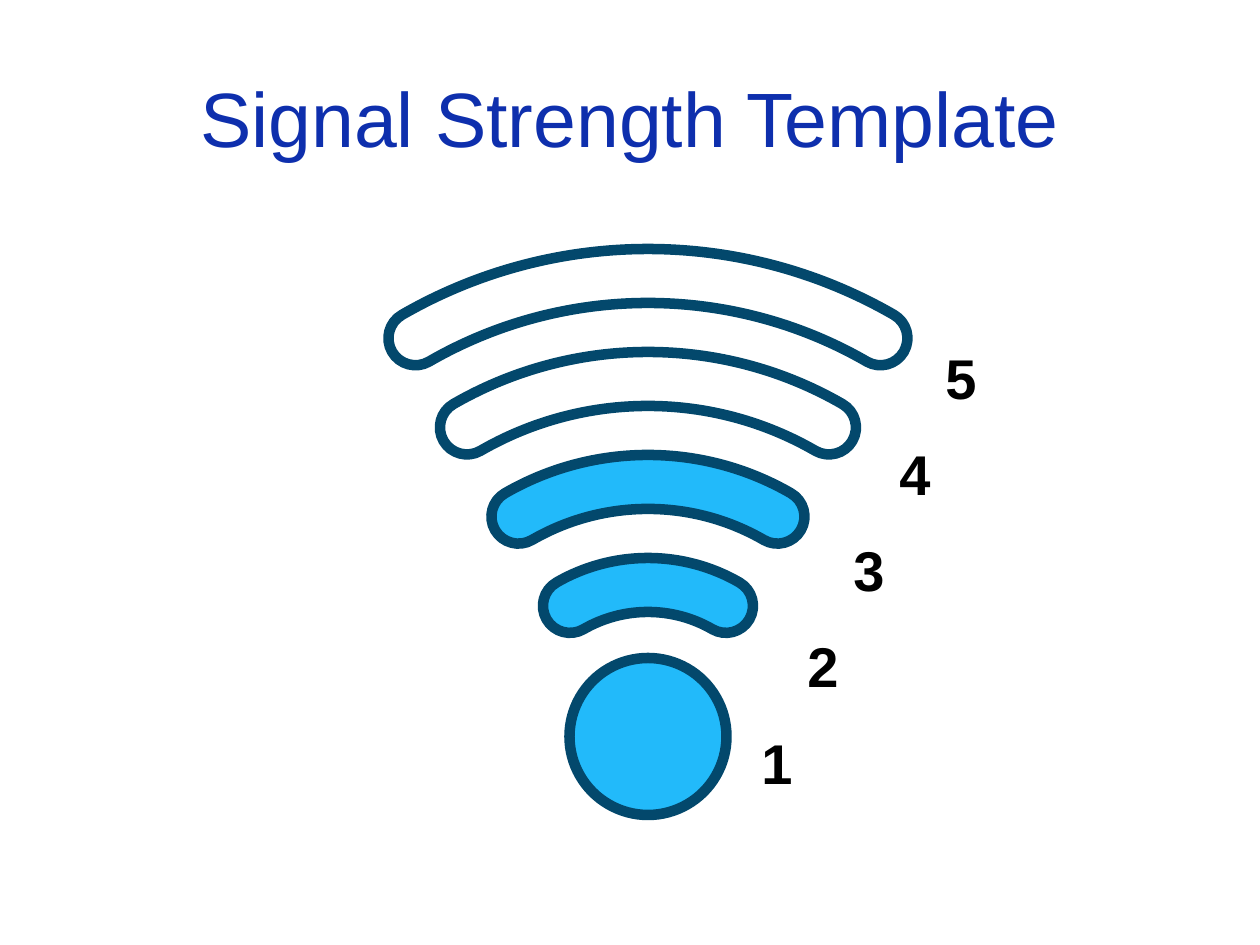
from dataclasses import dataclass
from math import cos, radians, sin, tan

from lxml.etree import SubElement
from pptx import Presentation
from pptx.dml.color import RGBColor
from pptx.enum.shapes import MSO_SHAPE
from pptx.enum.text import MSO_ANCHOR, MSO_AUTO_SIZE, PP_ALIGN
from pptx.oxml.ns import qn
from pptx.util import Pt

SCALE = 914400 / 126


@dataclass(frozen=True)
class Theme:
    """Colours, font and type sizes of the slide."""
    font: str = "Arial"
    title: str = "0E2FAD"
    label: str = "000000"
    edge: str = "03486C"
    full: str = "22BAFA"
    empty: str = "FFFFFF"
    head_size: int = 44
    label_size: int = 32
    edge_size: int = 6


THEME = Theme()


def emu(px):
    """Turn px into EMU."""
    return round(px * SCALE)


def apply(item, values):
    """Set each attribute named in a dict."""
    for name, value in values.items():
        setattr(item, name, value)


def place(item, box):
    """Move and size an item to a px box."""
    apply(item, dict(zip(("left", "top", "width", "height"), map(emu, box))))


def write(item, text, size, color, frame, align, bold):
    """Fill one text item and format it."""
    apply(item.text_frame, frame)
    line = item.text_frame.paragraphs[0]
    line.alignment = align
    run = line.add_run()
    run.text = text
    apply(run.font, {"name": THEME.font, "size": Pt(size), "bold": bold})
    run.font.color.rgb = RGBColor.from_string(color)


def paint(shape, lit):
    """Fill a lit or empty shape and draw its edge."""
    shape.shadow.inherit = False
    shape.fill.solid()
    color = THEME.full if lit else THEME.empty
    shape.fill.fore_color.rgb = RGBColor.from_string(color)
    shape.line.width = Pt(THEME.edge_size)
    shape.line.color.rgb = RGBColor.from_string(THEME.edge)


def polar(x, y, radius, angle):
    """Find the point at an angle in degrees about a centre."""
    return x + radius * cos(radians(angle)), y + radius * sin(radians(angle))


def curve(x, y, radius, start, end):
    """Give the two handles and the end point of one arc."""
    pull = 4 / 3 * tan(radians(end - start) / 4)
    (ax, ay), (bx, by) = (polar(x, y, radius, a) for a in (start, end))
    return [(ax - pull * (ay - y), ay + pull * (ax - x)),
            (bx + pull * (by - y), by - pull * (bx - x)), (bx, by)]


def sweep(x, y, radius, start, end):
    """Split an arc into two equal curves."""
    mid = (start + end) / 2
    return [curve(x, y, radius, start, mid), curve(x, y, radius, mid, end)]


def bend(form, box, start, curves):
    """Give a freeform a box and a path of curves inside it."""
    place(form, box)
    left, top, width, height = box
    trace = form._element.xpath(".//a:path")[0]
    trace.clear()
    trace.set("w", str(emu(width)))
    trace.set("h", str(emu(height)))
    for tag, points in [("a:moveTo", [start])] + [
            ("a:cubicBezTo", points) for points in curves]:
        part = SubElement(trace, qn(tag))
        for px, py in points:
            SubElement(part, qn("a:pt"), x=str(emu(px - left)),
                       y=str(emu(py - top)))
    SubElement(trace, qn("a:close"))


def band(slide, x, y, radius, half, lit):
    """Draw a round-ended band spanning 60 degrees about a centre."""
    left, right = (polar(x, y, radius, a) for a in (240, 300))
    start = polar(x, y, radius + half, 240)
    curves = (sweep(x, y, radius + half, 240, 300)
              + sweep(*right, half, 300, 480)
              + sweep(x, y, radius - half, 300, 240)
              + sweep(*left, half, 60, 240))
    form = slide.shapes.build_freeform(*start, scale=SCALE)
    form.add_line_segments([points[-1] for points in curves])
    shape = form.convert_to_shape()
    edge, top = left[0] - half, y - radius - half
    box = (edge, top, 2 * (x - edge), left[1] + half - top)
    bend(shape, box, start, curves)
    paint(shape, lit)


def signal(slide, box, level, count):
    """Draw the bands from the top down and the dot, lit up to a level."""
    left, top, width, height = box
    x, size, half, gap = left + width / 2, 157, 27, 103
    base = top + height
    for rank in range(count, 1, -1):
        radius = 156 + gap * (rank - 2)
        band(slide, x, base - 74, radius, half, rank <= level)
    dot = slide.shapes.add_shape(MSO_SHAPE.OVAL, 0, 0, 0, 0)
    place(dot, (x - size / 2, base - size, size, size))
    paint(dot, level >= 1)


def labels(slide, box, count):
    """Number the levels along a rising diagonal."""
    left, top, width, height = box
    wide, high = 57, 81
    frame = {"word_wrap": False, "auto_size": MSO_AUTO_SIZE.SHAPE_TO_FIT_TEXT}
    for step in range(count):
        part = step / (count - 1)
        item = slide.shapes.add_textbox(0, 0, 0, 0)
        place(item, (left + part * (width - wide),
                     top + (1 - part) * (height - high), wide, high))
        write(item, str(step + 1), THEME.label_size, THEME.label,
              frame, PP_ALIGN.LEFT, True)


def heading(slide, box, text):
    """Place the slide title."""
    item = slide.shapes.title
    place(item, box)
    frame = {"word_wrap": True, "vertical_anchor": MSO_ANCHOR.MIDDLE}
    write(item, text, THEME.head_size, THEME.title,
          frame, PP_ALIGN.CENTER, False)


def main():
    """Build and save the slide."""
    deck = Presentation()
    apply(deck, {"slide_width": emu(1260), "slide_height": emu(945)})
    slide = deck.slides.add_slide(deck.slide_layouts[5])
    heading(slide, (63, 38, 1134, 157), "Signal Strength Template")
    signal(slide, (385, 248, 526, 567), level=3, count=5)
    labels(slide, (749, 337, 241, 466), count=5)
    deck.save("out.pptx")


if __name__ == "__main__":
    main()
